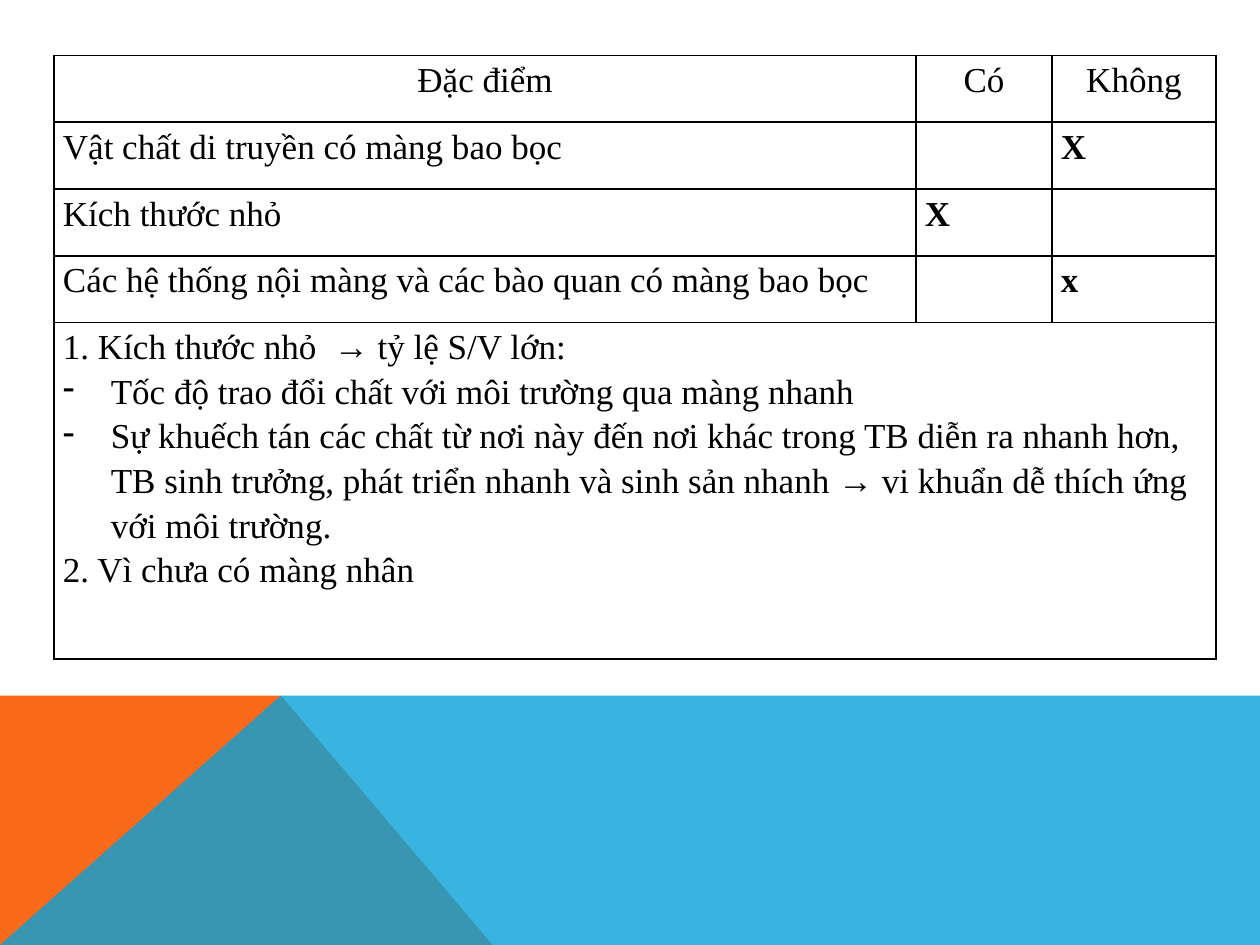
from lxml.etree import SubElement
from pptx import Presentation
from pptx.dml.color import RGBColor
from pptx.enum.text import PP_ALIGN as Align
from pptx.oxml.ns import qn
from pptx.util import Inches, Pt

HEADER = ["Đặc điểm", "Có", "Không"]
FEATURES = [
    ["Vật chất di truyền có màng bao bọc", "", "X"],
    ["Kích thước nhỏ", "X", ""],
    ["Các hệ thống nội màng và các bào quan có màng bao bọc", "", "x"],
]
# Text of each explanation, and whether it has a dash
EXPLANATIONS = [
    ("1. Kích thước nhỏ  → tỷ lệ S/V lớn:", False),
    ("Tốc độ trao đổi chất với môi trường qua màng nhanh", True),
    ("Sự khuếch tán các chất từ nơi này đến nơi khác trong TB diễn ra nhanh hơn, "
     "TB sinh trưởng, phát triển nhanh và sinh sản nhanh → vi khuẩn dễ thích ứng "
     "với môi trường.", True),
    ("2. Vì chưa có màng nhân", False),
]
COLUMN_WIDTHS = [6.84, 1.08, 1.3]
ROW_HEIGHTS = [0.53] * 4 + [2.67]


def color(hex_string):
    return RGBColor.from_string(hex_string)


def add_polygon(page, points, fill, opacity=100):
    corners = [(Inches(x), Inches(y)) for x, y in points]
    builder = page.shapes.build_freeform(*corners[0], scale=1.0)
    builder.add_line_segments(corners[1:], close=True)
    shape = builder.convert_to_shape()
    shape.shadow.inherit = False
    shape.fill.solid()
    shape.fill.fore_color.rgb = color(fill)
    shape.line.fill.background()
    if opacity < 100:
        tint = shape.fill._xPr.find(".//" + qn("a:srgbClr"))
        SubElement(tint, qn("a:alpha"), val=str(opacity * 1000))


def add_footer(page, left, top, width, height):
    right, bottom = left + width, top + height
    peak = (left + 2.23, top)
    add_polygon(page, [(left, bottom), (left, top), peak, (left + 3.91, bottom)], "F96A1B")
    add_polygon(page, [(left, bottom), peak, (right, top), (right, bottom)], "08A1D9", 80)


def add_dash(para):
    properties = para._p.get_or_add_pPr()
    properties.set("marL", str(Inches(0.38)))
    properties.set("indent", str(-Inches(0.38)))
    SubElement(properties, qn("a:buChar"), char="-")


def write(para, text, align=Align.LEFT, bold=False):
    para.text = text
    para.alignment = align
    para.line_spacing = 1.15
    para.font.name = "Times New Roman"
    para.font.size = Pt(20)
    para.font.bold = bold
    para.font.color.rgb = color("000000")


def format_cell(cell):
    cell.margin_left = cell.margin_right = Inches(0.07)
    cell.margin_top = cell.margin_bottom = 0
    properties = cell._tc.get_or_add_tcPr()
    for side in ("lnL", "lnR", "lnT", "lnB"):
        border = SubElement(properties, qn("a:" + side), w=str(Pt(1)))
        paint = SubElement(border, qn("a:solidFill"))
        SubElement(paint, qn("a:srgbClr"), val="000000")
    cell.fill.background()


def add_feature_table(page, left, top, width, height):
    frame = page.shapes.add_table(len(ROW_HEIGHTS), len(COLUMN_WIDTHS), Inches(left),
                                  Inches(top), Inches(width), Inches(height))
    table = frame.table
    table.first_row = table.horz_banding = False
    for column, size in zip(table.columns, COLUMN_WIDTHS):
        column.width = Inches(size)
    for row, size in zip(table.rows, ROW_HEIGHTS):
        row.height = Inches(size)
    for cell in table.iter_cells():
        format_cell(cell)

    # Header and feature rows
    for r, texts in enumerate([HEADER] + FEATURES):
        for c, text in enumerate(texts):
            if text:
                write(table.cell(r, c).text_frame.paragraphs[0], text,
                      Align.JUSTIFY if r else Align.CENTER, bold=r > 0 and c > 0)

    # Explanations across the full width
    last = len(ROW_HEIGHTS) - 1
    notes = table.cell(last, 0)
    notes.merge(table.cell(last, len(COLUMN_WIDTHS) - 1))
    for i, (text, dashed) in enumerate(EXPLANATIONS):
        para = notes.text_frame.add_paragraph() if i else notes.text_frame.paragraphs[0]
        if dashed:
            add_dash(para)
        write(para, text)


def main():
    deck = Presentation()
    deck.slide_width, deck.slide_height = Inches(10), Inches(7.5)
    page = deck.slides.add_slide(deck.slide_layouts[6])
    add_footer(page, 0, 5.52, 10, 1.98)
    add_feature_table(page, 0.43, 0.44, 9.22, 4.79)
    deck.save("out.pptx")


if __name__ == "__main__":
    main()
